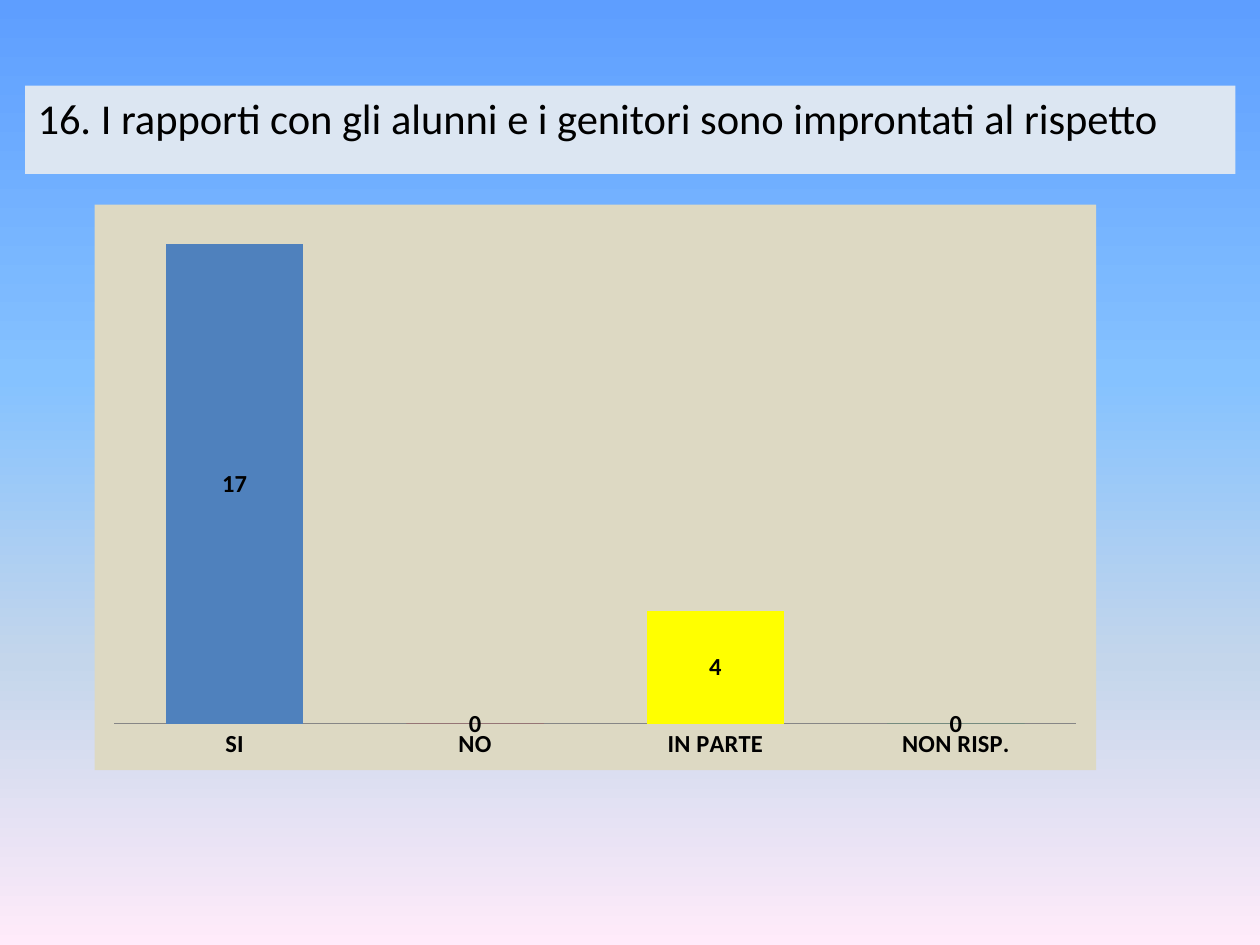
from copy import deepcopy
from dataclasses import dataclass

from lxml import etree
from pptx import Presentation
from pptx import util as u
from pptx.chart import data as chart_data
from pptx.dml import color
from pptx.enum import chart as chart_enum
from pptx.enum import text
from pptx.oxml import ns

FONT = "Calibri"
COLORS = {
    "sky_top": "5E9EFF",
    "sky_middle": "85C2FF",
    "sky_low": "C4D6EB",
    "sky_bottom": "FFEBFA",
    "title_fill": "DCE6F2",
    "chart_fill": "DDD9C3",
    "axis": "868686",
    "text": "000000",
    "blue": "4F81BD",
    "red": "FF0000",
    "yellow": "FFFF00",
    "green": "00B050",
}


@dataclass(frozen=True)
class Frame:
    left: float
    top: float
    width: float
    height: float

    def lengths(self) -> tuple:
        return tuple(u.Pt(n) for n in (self.left, self.top, self.width, self.height))


@dataclass(frozen=True)
class Answer:
    label: str
    count: int
    color: str


@dataclass(frozen=True)
class Stop:
    position: float
    color: str


SKY = [
    Stop(0, "sky_top"),
    Stop(0.4, "sky_middle"),
    Stop(0.7, "sky_low"),
    Stop(1, "sky_bottom"),
]
ANSWERS = [
    Answer("SI", 17, "blue"),
    Answer("NO", 0, "red"),
    Answer("IN PARTE", 4, "yellow"),
    Answer("NON RISP.", 0, "green"),
]


def rgb(name: str) -> color.RGBColor:
    return color.RGBColor.from_string(COLORS[name])


def paint(fill, name: str) -> None:
    fill.solid()
    fill.fore_color.rgb = rgb(name)


def style_font(font, size: float, bold: bool = False) -> None:
    font.name = FONT
    font.size = u.Pt(size)
    font.bold = bold
    font.color.rgb = rgb("text")


def draw_background(page, stops: list[Stop]) -> None:
    fill = page.background.fill
    fill.gradient()
    fill.gradient_angle = 270
    stop_list = page._element.find(".//" + ns.qn("a:gsLst"))
    for _ in range(len(stops) - len(stop_list)):
        stop_list.append(deepcopy(stop_list[0]))
    for target, stop in zip(fill.gradient_stops, stops):
        target.color.rgb = rgb(stop.color)
        target.position = stop.position


def draw_title(page, frame: Frame, words: str) -> None:
    box = page.shapes.add_textbox(*frame.lengths())
    paint(box.fill, "title_fill")
    box.text_frame.word_wrap = True
    box.text_frame.vertical_anchor = text.MSO_ANCHOR.TOP
    box.text_frame.text = words
    paragraph = box.text_frame.paragraphs[0]
    paragraph.alignment = text.PP_ALIGN.LEFT
    style_font(paragraph.runs[0].font, 24.3)


def fill_chart_area(chart, name: str) -> None:
    properties = etree.Element(ns.qn("c:spPr"))
    solid = etree.SubElement(properties, ns.qn("a:solidFill"))
    etree.SubElement(solid, ns.qn("a:srgbClr"), val=COLORS[name])
    line = etree.SubElement(properties, ns.qn("a:ln"))
    etree.SubElement(line, ns.qn("a:noFill"))
    chart._chartSpace.find(ns.qn("c:chart")).addnext(properties)


def draw_answers(page, frame: Frame, answers: list[Answer]) -> None:
    data = chart_data.CategoryChartData()
    data.categories = [answer.label for answer in answers]
    data.add_series("Series 1", [answer.count for answer in answers])
    chart = page.shapes.add_chart(
        chart_enum.XL_CHART_TYPE.COLUMN_STACKED, *frame.lengths(), data
    ).chart
    chart.has_legend = False
    chart.has_title = False
    style_font(chart.font, 10)
    fill_chart_area(chart, "chart_fill")

    value_axis = chart.value_axis
    value_axis.visible = False
    value_axis.has_major_gridlines = False
    value_axis.minimum_scale = 0
    value_axis.maximum_scale = 18

    category_axis = chart.category_axis
    category_axis.major_tick_mark = chart_enum.XL_TICK_MARK.NONE
    category_axis.format.line.color.rgb = rgb("axis")
    style_font(category_axis.tick_labels.font, 14, True)

    plot = chart.plots[0]
    plot.gap_width = 75
    plot.overlap = 100
    plot.vary_by_categories = False
    series = plot.series[0]
    paint(series.format.fill, answers[0].color)
    for index, answer in enumerate(answers[1:], 1):
        paint(series.points[index].format.fill, answer.color)
    labels = series.data_labels
    labels.show_value = True
    labels.position = chart_enum.XL_LABEL_POSITION.CENTER
    style_font(labels.font, 14, True)


def main() -> None:
    deck = Presentation()
    deck.slide_width = u.Pt(720)
    deck.slide_height = u.Pt(540)
    page = deck.slides.add_slide(deck.slide_layouts[6])
    draw_background(page, SKY)
    draw_title(
        page,
        Frame(14.4, 48.96, 691.6, 50.4),
        "16. I rapporti con gli alunni e i genitori sono improntati al rispetto",
    )
    draw_answers(page, Frame(54, 116.9, 572.4, 323.2), ANSWERS)
    deck.save("out.pptx")


if __name__ == "__main__":
    main()
